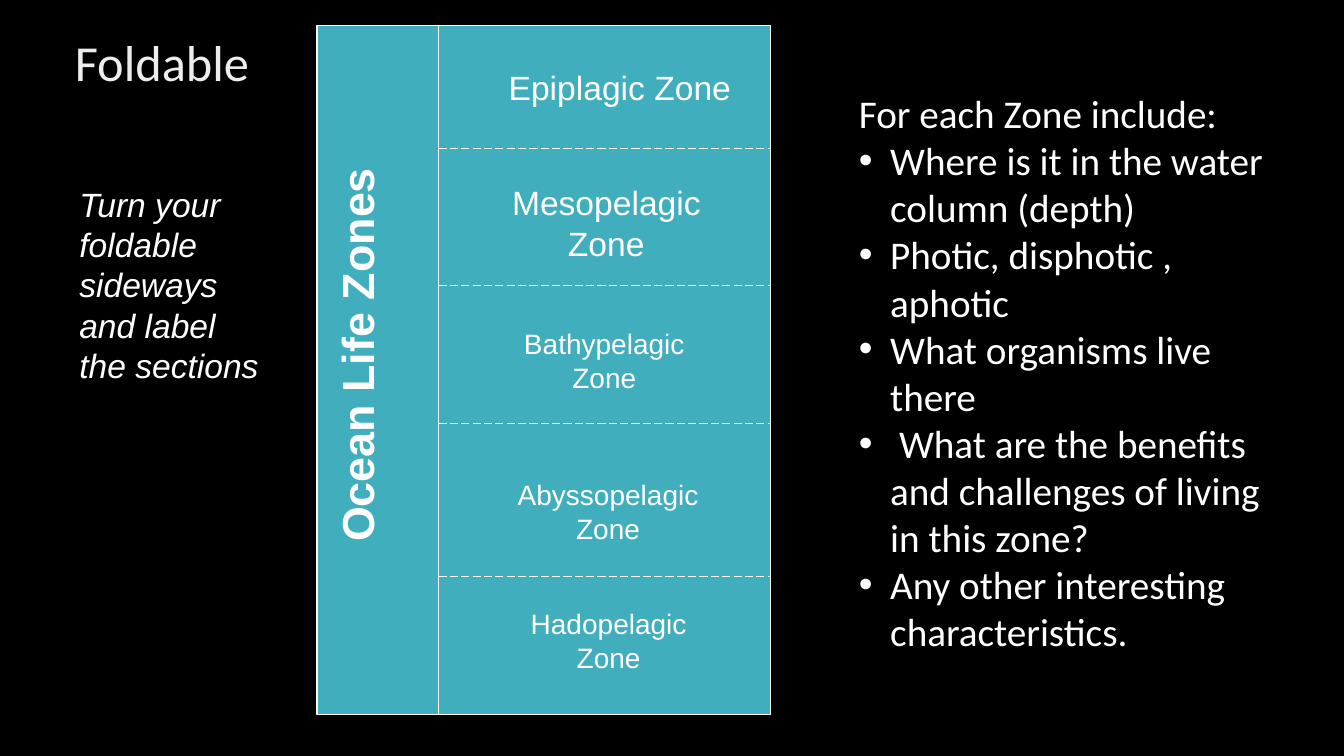
"""Build the Ocean Life Zones foldable slide."""
from dataclasses import dataclass
from typing import Any, Optional

from lxml import etree
from pptx import Presentation
from pptx import util as u
from pptx.dml import color
from pptx.enum import dml, shapes, text
from pptx.oxml import ns


@dataclass(frozen=True)
class Theme:
    paper: str = "000000"
    ink: str = "FFFFFF"
    heading: str = "EDEDED"
    foldable: str = "41AEBD"
    sans: str = "Arial"
    display: str = "Calibri"
    title: float = 36
    spine: float = 32
    body: float = 28
    large: float = 24
    small: float = 20
    rule: float = 0.75


@dataclass(frozen=True)
class Area:
    left: float
    top: float
    width: float
    height: float

    def lengths(self) -> list[u.Length]:
        return [u.Cm(value) for value in (self.left, self.top, self.width, self.height)]


@dataclass(frozen=True)
class Label:
    wording: str
    area: Area
    size: float
    bold: bool = False
    italic: bool = False
    rotation: float = 0
    align: Any = text.PP_ALIGN.CENTER


@dataclass(frozen=True)
class Rule:
    start: tuple[float, float]
    end: tuple[float, float]
    dash: Optional[Any] = None


THEME = Theme()
PANEL = Area(7.99, 0.65, 11.43, 17.35)
SPINE_X = 11.05
FOLDS = (3.73, 7.19, 10.67, 14.53)
RIGHT = PANEL.left + PANEL.width
RULES = [Rule((SPINE_X, PANEL.top + PANEL.height), (SPINE_X, PANEL.top))] + [
    Rule((SPINE_X, fold), (RIGHT, fold), dml.MSO_LINE.LONG_DASH) for fold in FOLDS
]
LABELS = (
    Label("Epiplagic Zone", Area(12.19, 1.57, 6.86, 1.27), THEME.large),
    Label("Mesopelagic Zone", Area(12.32, 4.47, 5.92, 2.31), THEME.large),
    Label("Bathypelagic Zone", Area(12.73, 8.1, 5, 1.96), THEME.small),
    Label("Abyssopelagic Zone", Area(12.52, 11.91, 5.61, 1.96), THEME.small),
    Label("Hadopelagic Zone", Area(12.9, 15.16, 4.88, 1.96), THEME.small),
    Label("Ocean Life Zones", Area(0.2, 8.13, 17.58, 1.63), THEME.spine,
          bold=True, rotation=270),
    Label("Turn your foldable sideways and label the sections",
          Area(1.75, 4.5, 5.08, 5.38), THEME.large, italic=True,
          align=text.PP_ALIGN.LEFT),
)
TITLE_AREA = Area(1.63, 0.38, 22.86, 2.54)
LIST_AREA = Area(21.39, 2.13, 11.2, 14.63)
LIST_HEADING = "For each Zone include:"
LIST_ITEMS = (
    "Where is it in the water column (depth)",
    "Photic, disphotic , aphotic",
    "What organisms live there",
    " What are the benefits and challenges of living in this zone?",
    "Any other interesting characteristics.",
)


def apply(target: Any, values: dict[str, Any]) -> None:
    for name, value in values.items():
        setattr(target, name, value)


def rgb(code: str) -> color.RGBColor:
    return color.RGBColor.from_string(code)


def place(shape: Any, area: Area) -> None:
    apply(shape, dict(zip(("left", "top", "width", "height"), area.lengths())))


def write(para: Any, wording: str, ink: str, **values: Any) -> None:
    span = para.add_run()
    span.text = wording
    apply(span.font, values)
    span.font.color.rgb = rgb(ink)


def set_bullet(para: Any, bullet: Optional[str]) -> None:
    properties = para._p.get_or_add_pPr()
    hang = u.Cm(0.79) if bullet else 0
    properties.set("marL", str(hang))
    properties.set("indent", str(-hang))
    mark = etree.SubElement(properties, ns.qn("a:buChar" if bullet else "a:buNone"))
    if bullet:
        mark.set("char", bullet)


def draw_title(slide: Any) -> None:
    box = slide.shapes.title
    place(box, TITLE_AREA)
    apply(box.text_frame, {"vertical_anchor": text.MSO_ANCHOR.MIDDLE, "word_wrap": True})
    para = box.text_frame.paragraphs[0]
    apply(para, {"alignment": text.PP_ALIGN.LEFT, "line_spacing": 0.9})
    write(para, "Foldable", THEME.heading, name=THEME.display, size=u.Pt(THEME.title))


def draw_list(slide: Any) -> None:
    box = slide.placeholders[1]
    place(box, LIST_AREA)
    frame = box.text_frame
    apply(frame, {"auto_size": text.MSO_AUTO_SIZE.SHAPE_TO_FIT_TEXT, "word_wrap": True})
    for index, wording in enumerate((LIST_HEADING, *LIST_ITEMS)):
        para = frame.add_paragraph() if index else frame.paragraphs[0]
        para.space_before = u.Pt(0)
        set_bullet(para, "•" if index else None)
        write(para, wording, THEME.ink, name=THEME.display, size=u.Pt(THEME.body))


def draw_panel(slide: Any) -> None:
    panel = slide.shapes.add_shape(shapes.MSO_SHAPE.RECTANGLE, *PANEL.lengths())
    panel.shadow.inherit = False
    panel.fill.solid()
    panel.fill.fore_color.rgb = rgb(THEME.foldable)
    panel.line.color.rgb = rgb(THEME.ink)
    panel.line.width = u.Pt(THEME.rule)


def draw_rule(slide: Any, rule: Rule) -> None:
    points = [u.Cm(value) for value in (*rule.start, *rule.end)]
    connector = slide.shapes.add_connector(shapes.MSO_CONNECTOR.STRAIGHT, *points)
    connector.line.color.rgb = rgb(THEME.ink)
    apply(connector.line, {"width": u.Pt(THEME.rule), "dash_style": rule.dash})
    etree.SubElement(connector._element.spPr, ns.qn("a:effectLst"))


def draw_label(slide: Any, label: Label) -> None:
    box = slide.shapes.add_textbox(*label.area.lengths())
    box.rotation = label.rotation
    apply(box.text_frame, {"word_wrap": True,
                           "auto_size": text.MSO_AUTO_SIZE.SHAPE_TO_FIT_TEXT})
    para = box.text_frame.paragraphs[0]
    para.alignment = label.align
    write(para, label.wording, THEME.ink, name=THEME.sans, size=u.Pt(label.size),
          bold=label.bold, italic=label.italic)


def main() -> None:
    deck = Presentation()
    apply(deck, {"slide_width": u.Cm(33.87), "slide_height": u.Cm(19.05)})
    slide = deck.slides.add_slide(deck.slide_layouts[1])
    slide.background.fill.solid()
    slide.background.fill.fore_color.rgb = rgb(THEME.paper)
    draw_title(slide)
    draw_panel(slide)
    for rule in RULES:
        draw_rule(slide, rule)
    for label in LABELS:
        draw_label(slide, label)
    draw_list(slide)
    deck.save("out.pptx")


if __name__ == "__main__":
    main()
